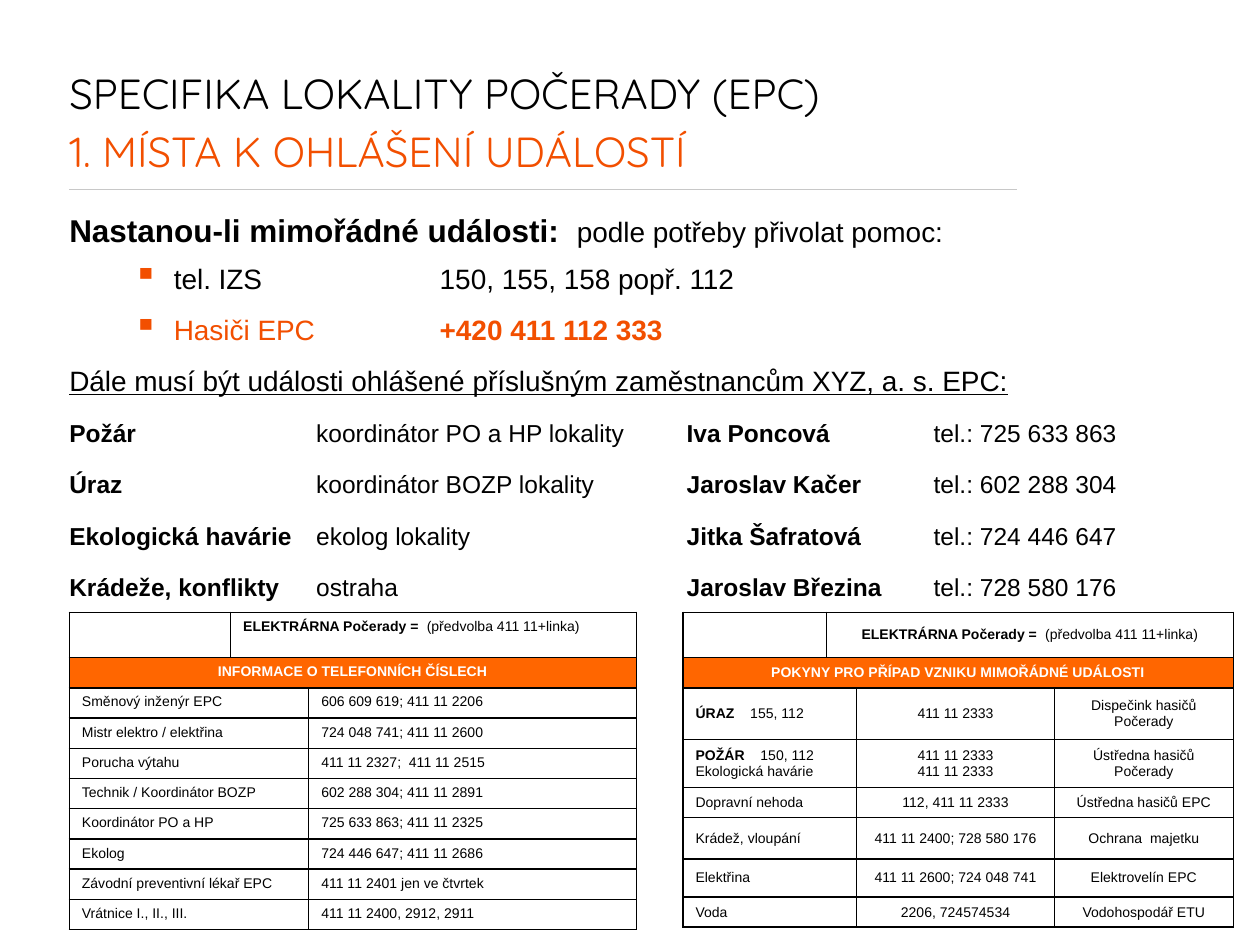
from lxml.etree import SubElement
from pptx import Presentation
from pptx.dml.color import RGBColor
from pptx.enum.text import MSO_ANCHOR, PP_ALIGN
from pptx.oxml.ns import qn
from pptx.util import Inches, Pt

HUES = {"ink": "000000", "accent": "F24F00", "band": "FF6600", "rule": "C8C8C8", "paper": "FFFFFF"}
wide, high = Inches(10), Inches(7.5)
left = 0.055


def part(share, whole=wide):
    return int(share * whole)


def write(para, text, size, hue="ink", face="Arial"):
    para.font.size = Pt(size)
    para.font.name = face
    para.font.color.rgb = RGBColor.from_string(HUES[hue])
    for turn, piece in enumerate(text.split("*")):
        if piece:
            run = para.add_run()
            run.text = piece
            run.font.bold = turn % 2 == 1


deck = Presentation()
deck.slide_width, deck.slide_height = wide, high
slide = deck.slides.add_slide(deck.slide_layouts[6])

rule = slide.shapes.add_connector(1, part(left), part(0.2, high), part(0.807), part(0.2, high))
rule.line.color.rgb = RGBColor.from_string(HUES["rule"])
rule.line.width = Pt(0.5)
SubElement(rule._element.spPr, qn("a:effectLst"))

frames = []
for top, width, height in [(0.064, 0.752, 0.124), (0.221, 0.89, 0.41)]:
    box = slide.shapes.add_textbox(part(left), part(top, high), part(width), part(height, high))
    frame = box.text_frame
    frame.word_wrap = True
    frame.margin_left = frame.margin_right = frame.margin_top = frame.margin_bottom = 0
    frames.append(frame)
title, body = frames

heads = [("SPECIFIKA LOKALITY POČERADY (EPC)", "ink"), ("1. MÍSTA K OHLÁŠENÍ UDÁLOSTÍ", "accent")]
for num, (text, hue) in enumerate(heads):
    para = title.add_paragraph() if num else title.paragraphs[0]
    para.line_spacing = Pt(33)
    write(para, text, 24, hue, "Quicksand")

lines = [
    ("*Nastanou-li mimořádné události:  *podle potřeby přivolat pomoc:", 16, "ink", "lead"),
    ("tel. IZS\t150, 155, 158 popř. 112", 16, "ink", "bullet"),
    ("Hasiči EPC\t*+420 411 112 333*", 16, "accent", "bullet"),
    ("Dále musí být události ohlášené příslušným zaměstnancům XYZ, a. s. EPC:", 16, "ink", "under"),
    ("*Požár*\tkoordinátor PO a HP lokality\t*Iva Poncová*\ttel.: 725 633 863", 14, "ink", "list"),
    ("*Úraz*\tkoordinátor BOZP lokality\t*Jaroslav Kačer*\ttel.: 602 288 304", 14, "ink", "list"),
    ("*Ekologická havárie*\tekolog lokality\t*Jitka Šafratová*\ttel.: 724 446 647", 14, "ink", "list"),
    ("*Krádeže, konflikty*\tostraha\t*Jaroslav Březina*\ttel.: 728 580 176", 14, "ink", "list"),
]
stops = {"bullet": [0.294], "list": [0.196, 0.49, 0.686]}
for num, (text, size, hue, kind) in enumerate(lines):
    para = body.add_paragraph() if num else body.paragraphs[0]
    para.line_spacing = Pt(23)
    if num:
        para.space_before = para.space_after = Pt(3.1)
    props = para._p.get_or_add_pPr()
    if kind == "bullet":
        props.set("marL", str(part(0.083)))
        props.set("indent", str(part(-0.032)))
        SubElement(SubElement(props, qn("a:buClr")), qn("a:srgbClr"), val=HUES["accent"])
        SubElement(props, qn("a:buSzPct"), val="120000")
        SubElement(props, qn("a:buChar"), char="▪")
    if kind in stops:
        tabs = SubElement(props, qn("a:tabLst"))
        for stop in stops[kind]:
            SubElement(tabs, qn("a:tab"), pos=str(part(stop)), algn="l")
    write(para, text, size, hue)
    if kind == "lead":
        para.runs[0].font.size = Pt(18)
    if kind == "under":
        para.runs[0].font.underline = True

plant = "*ELEKTRÁRNA Počerady =  *(předvolba 411 11+linka)"
phones = [
    ["", plant],
    ["*INFORMACE O TELEFONNÍCH ČÍSLECH*"],
    ["Směnový inženýr EPC", "606 609 619; 411 11 2206"],
    ["Mistr elektro / elektřina", "724 048 741; 411 11 2600"],
    ["Porucha výtahu", "411 11 2327;  411 11 2515"],
    ["Technik / Koordinátor BOZP", "602 288 304; 411 11 2891"],
    ["Koordinátor PO a HP", "725 633 863; 411 11 2325"],
    ["Ekolog", "724 446 647; 411 11 2686"],
    ["Závodní preventivní lékař EPC", "411 11 2401 jen ve čtvrtek"],
    ["Vrátnice I., II., III.", "411 11 2400, 2912, 2911"],
]
orders = [
    ["", plant],
    ["*POKYNY PRO PŘÍPAD VZNIKU MIMOŘÁDNÉ UDÁLOSTI*"],
    ["*ÚRAZ    *155, 112", "411 11 2333", "Dispečink hasičů\nPočerady"],
    ["*POŽÁR    *150, 112\nEkologická havárie", "411 11 2333\n411 11 2333", "Ústředna hasičů\nPočerady"],
    ["Dopravní nehoda", "112, 411 11 2333", "Ústředna hasičů EPC"],
    ["Krádež, vloupání", "411 11 2400; 728 580 176", "Ochrana  majetku"],
    ["Elektřina", "411 11 2600; 724 048 741", "Elektrovelín EPC"],
    ["Voda", "2206, 724574534", "Vodohospodář ETU"],
]
grids = [
    (left, phones, [1.28, 0.62, 2.6], [0.36] + [0.24] * 9, MSO_ANCHOR.TOP, PP_ALIGN.LEFT),
    (0.542, orders, [1.14, 0.2, 1.57, 1.42], [0.36, 0.24, 0.41, 0.38, 0.24, 0.33, 0.3, 0.24],
     MSO_ANCHOR.MIDDLE, PP_ALIGN.CENTER),
]
for start, rows, cols, tall, anchor, align in grids:
    last = len(cols) - 1
    grid = slide.shapes.add_table(len(rows), len(cols), part(start), part(0.648, high),
                                  Inches(sum(cols)), Inches(sum(tall))).table
    grid.first_row = grid.horz_banding = False
    for col, size in zip(grid.columns, cols):
        col.width = Inches(size)
    for row, size in zip(grid.rows, tall):
        row.height = Inches(size)
    for cell in grid.iter_cells():
        props = cell._tc.get_or_add_tcPr()
        for side in ("lnL", "lnR", "lnT", "lnB"):
            edge = SubElement(props, qn("a:" + side), w=str(Pt(1)))
            SubElement(SubElement(edge, qn("a:solidFill")), qn("a:srgbClr"), val=HUES["ink"])
        cell.fill.background()
        cell.vertical_anchor = anchor
    for num, texts in enumerate(rows):
        spans = {0: [(0, 0), (1, last)], 1: [(0, last)]}.get(
            num, [(0, 1)] + [(col, col) for col in range(2, last + 1)])
        for (first, end), text in zip(spans, texts):
            cell = grid.cell(num, first)
            if end > first:
                cell.merge(grid.cell(num, end))
            if num == 1:
                cell.fill.solid()
                cell.fill.fore_color.rgb = RGBColor.from_string(HUES["band"])
            for step, line in enumerate(text.split("\n")):
                para = cell.text_frame.add_paragraph() if step else cell.text_frame.paragraphs[0]
                para.alignment = PP_ALIGN.CENTER if num == 1 else align if first else PP_ALIGN.LEFT
                write(para, line, 8, "paper" if num == 1 else "ink")

deck.save("out.pptx")
